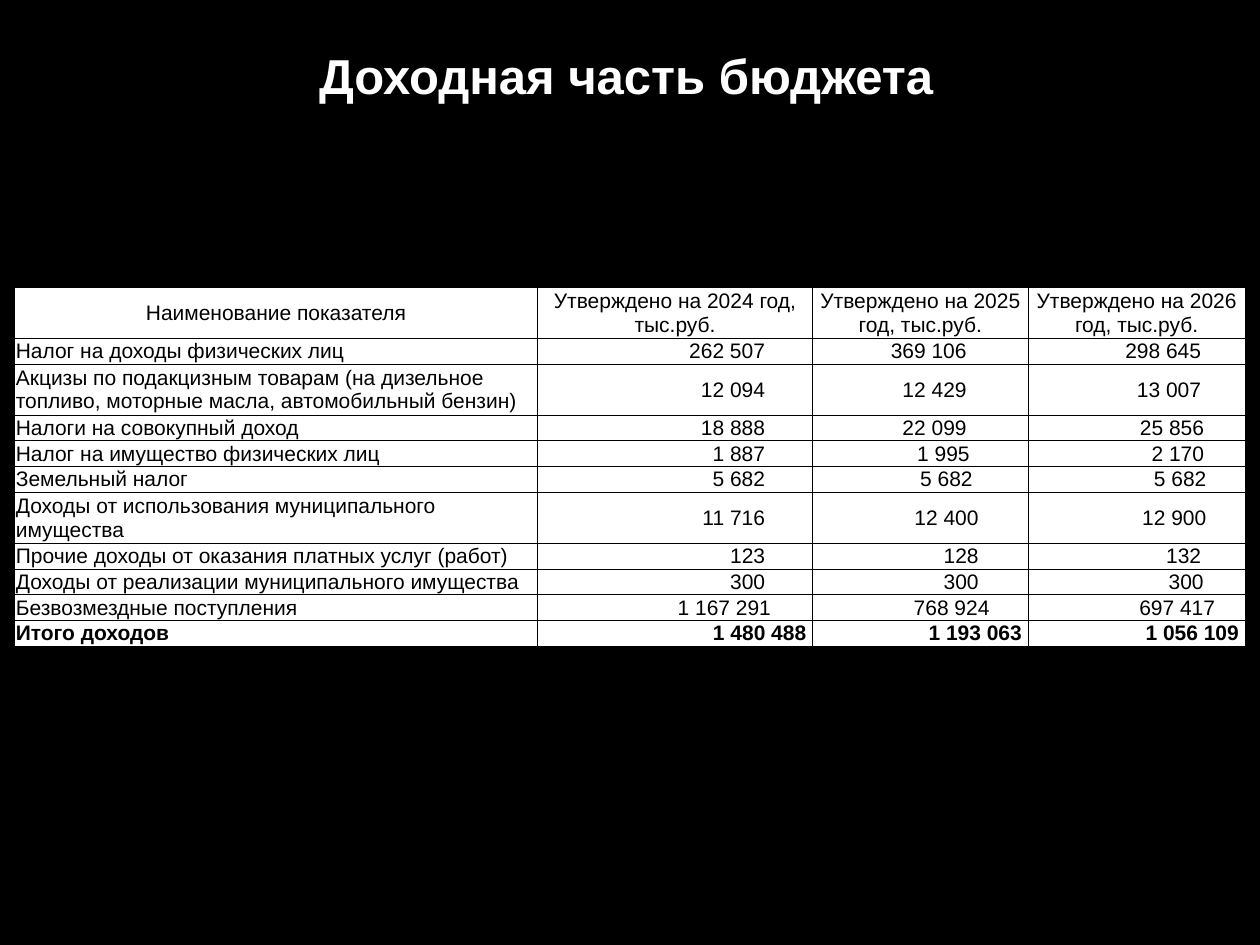
import pptx
import pptx.dml.color
import pptx.enum.text
import pptx.oxml
import pptx.oxml.ns
import pptx.util

Pt = pptx.util.Pt
ALIGN = pptx.enum.text.PP_ALIGN
MIDDLE = pptx.enum.text.MSO_ANCHOR.MIDDLE

COLORS = {"background": "000000", "paper": "FFFFFF", "ink": "000000", "title": "FFFFFF"}
FONT = "Arial"

COLUMN_WIDTHS = [298.8, 157.2, 123.2, 124]
LINE_HEIGHT = 13.9
TWO_LINE_HEIGHT = 27.4
TWO_LINE_ROWS = {0, 2, 6}
SIDE_INSET = 0.7
TOP_INSET = 0.3

# Right insets of the numbers, one list per year, one value per table row.
NUMBER_INSETS = [
    [27.2] * 8 + [23.8, 3.6],
    [35.2] * 3 + [33.5, 31.8] + [28.4] * 3 + [22.1, 3.6],
    [25.2] * 2 + [23.5] * 2 + [22.2] * 2 + [25.2, 23.8, 17.2, 3.6],
]

HEADER = ["Наименование показателя"] + [
    f"Утверждено на {year} год, тыс.руб." for year in (2024, 2025, 2026)
]
INCOME = [
    ["Налог на доходы физических лиц", "262 507", "369 106", "298 645"],
    ["Акцизы по подакцизным товарам (на дизельное топливо, моторные масла, "
     "автомобильный бензин)", "12 094", "12 429", "13 007"],
    ["Налоги на совокупный доход", "18 888", "22 099", "25 856"],
    ["Налог на имущество физических лиц", "1 887", "1 995", "2 170"],
    ["Земельный налог", "5 682", "5 682", "5 682"],
    ["Доходы от использования муниципального имущества", "11 716", "12 400", "12 900"],
    ["Прочие доходы от оказания платных услуг (работ)", "123", "128", "132"],
    ["Доходы от реализации муниципального имущества", "300", "300", "300"],
    ["Безвозмездные поступления", "1 167 291", "768 924", "697 417"],
]
TOTAL = ["Итого доходов", "1 480 488", "1 193 063", "1 056 109"]


def rgb(name):
    return pptx.dml.color.RGBColor.from_string(COLORS[name])


def write_text(frame, text, *, size=12, color="ink", bold=False, align=ALIGN.LEFT):
    frame.word_wrap = True
    para = frame.paragraphs[0]
    para.alignment = align
    span = para.add_run()
    span.text = text
    span.font.name = FONT
    span.font.size = Pt(size)
    span.font.bold = bold
    span.font.color.rgb = rgb(color)


def add_title(page, text):
    box = page.shapes.add_textbox(Pt(33.8), Pt(16.6), Pt(648), Pt(51.8))
    box.text_frame.vertical_anchor = MIDDLE
    write_text(box.text_frame, text, size=28, color="title", bold=True, align=ALIGN.CENTER)


def add_borders(cell):
    """Draw a half-point line on all four sides; the lines must precede the fill."""
    properties = cell._tc.get_or_add_tcPr()
    for position, side in enumerate(("lnL", "lnR", "lnT", "lnB")):
        line = pptx.oxml.parse_xml(
            f'<a:{side} {pptx.oxml.ns.nsdecls("a")} w="{Pt(0.5)}"><a:solidFill>'
            f'<a:srgbClr val="{COLORS["ink"]}"/></a:solidFill></a:{side}>'
        )
        properties.insert(position, line)


def fill_cell(cell, text, right_inset=SIDE_INSET, **text_format):
    cell.margin_left = Pt(SIDE_INSET)
    cell.margin_right = Pt(right_inset)
    cell.margin_top = Pt(TOP_INSET)
    cell.margin_bottom = 0
    cell.vertical_anchor = MIDDLE
    cell.fill.solid()
    cell.fill.fore_color.rgb = rgb("paper")
    add_borders(cell)
    write_text(cell.text_frame, text, **text_format)


def add_income_table(page):
    rows = [HEADER, *INCOME, TOTAL]
    heights = [TWO_LINE_HEIGHT if index in TWO_LINE_ROWS else LINE_HEIGHT
               for index in range(len(rows))]
    table = page.shapes.add_table(
        len(rows), len(COLUMN_WIDTHS), Pt(8.4), Pt(164.2),
        Pt(sum(COLUMN_WIDTHS)), Pt(sum(heights)),
    ).table
    table.first_row = table.horz_banding = False
    for column, width in zip(table.columns, COLUMN_WIDTHS):
        column.width = Pt(width)
    for row, height in zip(table.rows, heights):
        row.height = Pt(height)

    for index, text in enumerate(HEADER):
        fill_cell(table.cell(0, index), text, align=ALIGN.CENTER)
    for index, (name, *values) in enumerate(rows[1:], start=1):
        is_total = index == len(rows) - 1
        fill_cell(table.cell(index, 0), name, bold=is_total)
        for column, (value, insets) in enumerate(zip(values, NUMBER_INSETS), start=1):
            fill_cell(table.cell(index, column), value, right_inset=insets[index - 1],
                      bold=is_total, align=ALIGN.RIGHT)


def main():
    deck = pptx.Presentation()
    deck.slide_width, deck.slide_height = Pt(720), Pt(540)
    page = deck.slides.add_slide(deck.slide_layouts[6])
    page.background.fill.solid()
    page.background.fill.fore_color.rgb = rgb("background")
    add_title(page, "Доходная часть бюджета")
    add_income_table(page)
    deck.save("out.pptx")


if __name__ == "__main__":
    main()
